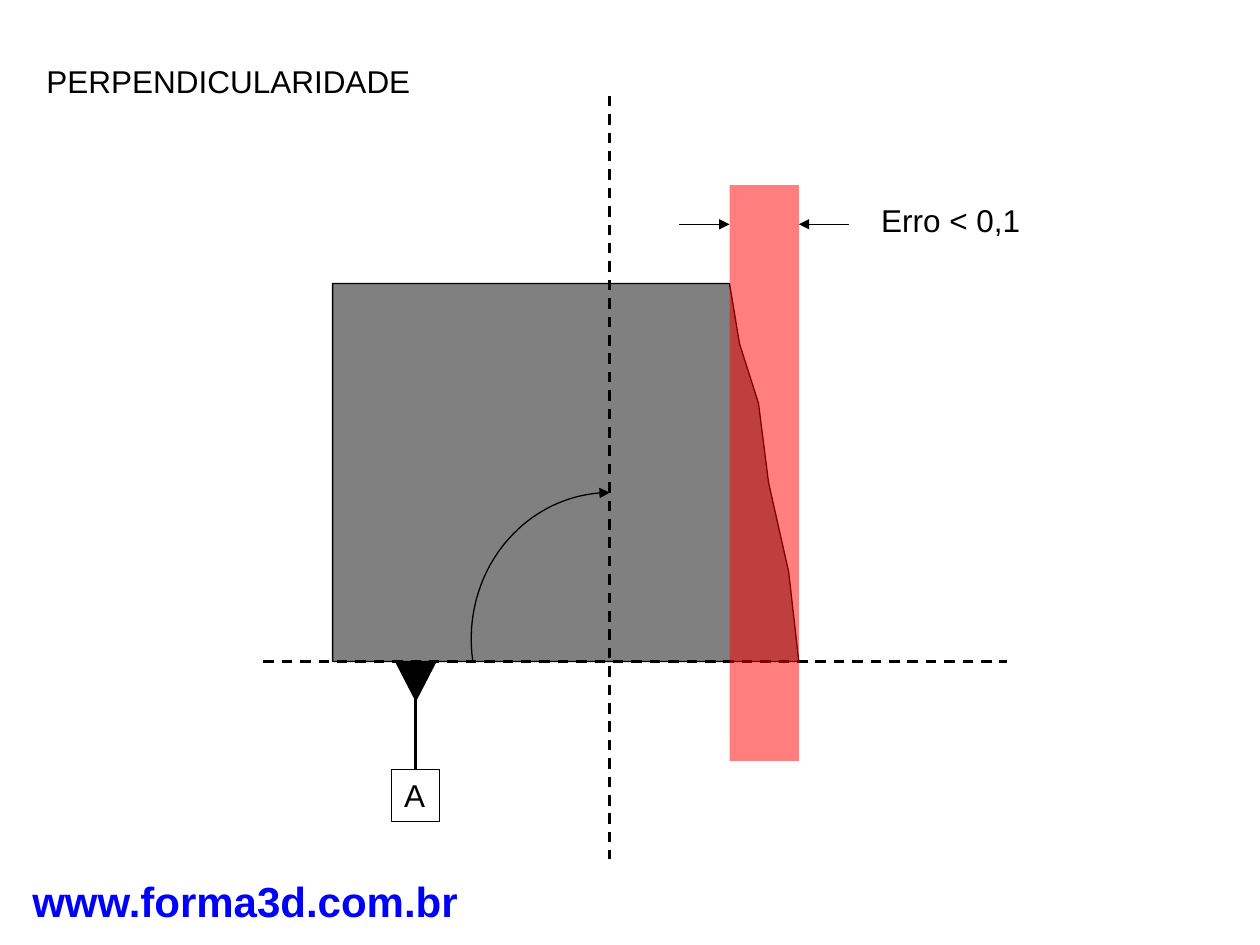
import math
from lxml import etree
from pptx import Presentation
from pptx import util as u
from pptx.dml.color import RGBColor
from pptx.enum import dml, shapes, text
from pptx.oxml.ns import qn

BLACK = RGBColor(0, 0, 0)
WHITE = RGBColor(255, 255, 255)
GRAY = RGBColor(128, 128, 128)
RED = RGBColor(255, 0, 0)
BLUE = RGBColor(0, 0, 255)

BASE_Y = 5.25
AXIS_X = 4.84
DATUM_X = 3.3
BAND_LEFT, BAND_RIGHT = 5.79, 6.34
ARROW_Y = 1.78

deck = Presentation()
deck.slide_width = u.Inches(10)
deck.slide_height = u.Inches(7.5)
page = deck.slides.add_slide(deck.slide_layouts[6])


def write_text(box, words, size=18, color=BLACK, bold=False, align=text.PP_ALIGN.LEFT):
    frame = box.text_frame
    frame.word_wrap = False
    frame.auto_size = text.MSO_AUTO_SIZE.SHAPE_TO_FIT_TEXT
    frame.vertical_anchor = text.MSO_ANCHOR.TOP
    para = frame.paragraphs[0]
    para.alignment = align
    span = para.add_run()
    span.text = words
    span.font.name = "Arial"
    span.font.size = u.Pt(size)
    span.font.bold = bold
    span.font.color.rgb = color


def add_line(x1, y1, x2, y2, width=1.5, dashed=False, arrow=False):
    line = page.shapes.add_connector(
        shapes.MSO_CONNECTOR.STRAIGHT, *[u.Inches(v) for v in (x1, y1, x2, y2)])
    line.line.color.rgb = BLACK
    line.line.width = u.Pt(width)
    if dashed:
        line.line.dash_style = dml.MSO_LINE.DASH
    properties = line._element.spPr
    if arrow:
        etree.SubElement(properties.find(qn("a:ln")), qn("a:tailEnd"), type="triangle")
    etree.SubElement(properties, qn("a:effectLst"))
    return line


for words, place, style in [
    ("www.forma3d.com.br", (0.15, 6.9, 3.59, 0.5),
     dict(size=24, color=BLUE, bold=True, align=text.PP_ALIGN.CENTER)),
    ("PERPENDICULARIDADE", (0.27, 0.44, 3.09, 0.4), {}),
    ("Erro < 0,1", (6.89, 1.55, 1.31, 0.4), dict(align=text.PP_ALIGN.CENTER)),
]:
    label = page.shapes.add_textbox(*[u.Inches(v) for v in place])
    write_text(label, words, **style)

leader = add_line(DATUM_X, 5.4, DATUM_X, 6.11)

datum_triangle = page.shapes.add_shape(
    shapes.MSO_SHAPE.ISOSCELES_TRIANGLE,
    u.Inches(DATUM_X - 0.16), u.Inches(BASE_Y), u.Inches(0.32), u.Inches(0.31))
datum_triangle.rotation = 180

datum_box = page.shapes.add_shape(
    shapes.MSO_SHAPE.RECTANGLE,
    u.Inches(DATUM_X - 0.19), u.Inches(6.11), u.Inches(0.38), u.Inches(0.41))
write_text(datum_box, "A")
leader.end_connect(datum_box, 0)

profile = [(2.64, 2.25), (2.64, BASE_Y), (BAND_RIGHT, BASE_Y), (6.26, 4.54),
           (6.1, 3.83), (6.02, 3.2), (5.87, 2.73), (BAND_LEFT, 2.25)]
corners = [(u.Inches(x), u.Inches(y)) for x, y in profile]
builder = page.shapes.build_freeform(*corners[0])
builder.add_line_segments(corners[1:], close=True)
part = builder.convert_to_shape()

add_line(2.09, BASE_Y, 7.99, BASE_Y, dashed=True)
add_line(AXIS_X, 0.76, AXIS_X, 6.82, dashed=True)

band = page.shapes.add_shape(
    shapes.MSO_SHAPE.RECTANGLE, u.Inches(BAND_LEFT), u.Inches(1.47),
    u.Inches(BAND_RIGHT - BAND_LEFT), u.Inches(4.57))

angles = [math.radians(98.5 * step / 40) for step in range(41)]
curve = [(u.Inches(AXIS_X - 1.1 * math.sin(a)), u.Inches(5.07 - 1.16 * math.cos(a)))
         for a in angles]
builder = page.shapes.build_freeform(*curve[0])
builder.add_line_segments(curve[1:], close=False)
angle_arc = builder.convert_to_shape()

for shape, fill, outline in [
    (datum_triangle, BLACK, BLACK), (datum_box, WHITE, BLACK), (part, GRAY, BLACK),
    (band, RED, None), (angle_arc, None, BLACK),
]:
    shape.shadow.inherit = False
    if fill is None:
        shape.fill.background()
    else:
        shape.fill.solid()
        shape.fill.fore_color.rgb = fill
    if outline is None:
        shape.line.fill.background()
    else:
        shape.line.color.rgb = outline
        shape.line.width = u.Pt(0.75)

band_color = band._element.spPr.find(qn("a:solidFill")).find(qn("a:srgbClr"))
etree.SubElement(band_color, qn("a:alpha"), val="50000")
arc_outline = angle_arc._element.spPr.find(qn("a:ln"))
etree.SubElement(arc_outline, qn("a:headEnd"), type="triangle")

for start, end in [(BAND_LEFT - 0.4, BAND_LEFT), (BAND_RIGHT + 0.4, BAND_RIGHT)]:
    add_line(start, ARROW_Y, end, ARROW_Y, width=0.75, arrow=True)

deck.save("out.pptx")
